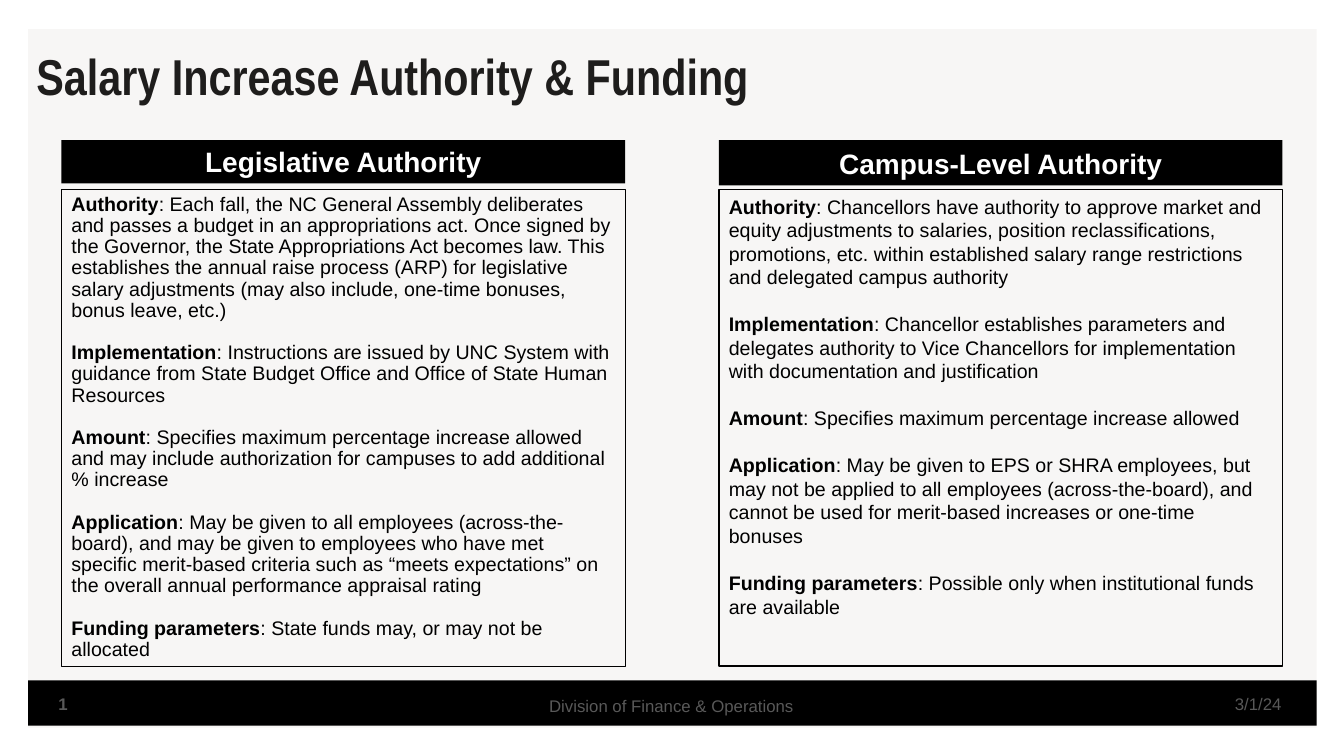
from pptx import Presentation
from pptx.dml.color import RGBColor
from pptx.enum.shapes import MSO_SHAPE
from pptx.enum.text import MSO_ANCHOR, MSO_AUTO_SIZE, PP_ALIGN
from pptx.oxml.ns import qn
from pptx.util import Pt
from lxml import etree

RECTANGLE = MSO_SHAPE.RECTANGLE
TOP, MIDDLE, BOTTOM = MSO_ANCHOR.TOP, MSO_ANCHOR.MIDDLE, MSO_ANCHOR.BOTTOM
LEFT, CENTER, RIGHT = PP_ALIGN.LEFT, PP_ALIGN.CENTER, PP_ALIGN.RIGHT
PX = 9144  # 100 px to the inch
COLORS = {"black": "000000", "white": "FFFFFF", "panel": "D0C6C0", "footer": "595959"}


def add_box(left, top, width, height, fill=None, line=None):
    box = page.shapes.add_shape(RECTANGLE, left * PX, top * PX, width * PX, height * PX)
    box.shadow.inherit = False
    if fill:
        box.fill.solid()
        box.fill.fore_color.rgb = RGBColor.from_string(COLORS[fill])
    else:
        box.fill.background()
    if line:
        box.line.color.rgb = RGBColor.from_string(COLORS["black"])
        box.line.width = Pt(line)
    else:
        box.line.fill.background()
    return box


def style(para, size, color, align=LEFT, bold=None, name="Arial"):
    para.alignment = align
    para.font.name = name
    para.font.size = Pt(size)
    para.font.bold = bold
    para.font.color.rgb = RGBColor.from_string(COLORS[color])


deck = Presentation()
deck.slide_width, deck.slide_height = 1333 * PX, 750 * PX
page = deck.slides.add_slide(deck.slide_layouts[5])

# Background panel and footer bar
panel = add_box(28, 29, 1278, 693, "panel")
panel_color = panel.fill._xPr.find(qn("a:solidFill"))[0]
etree.SubElement(panel_color, qn("a:alpha")).set("val", "15000")
add_box(28, 675, 1278, 45, "black")

# Footer texts
footers = [
    ("3/1/24", 1077, 678, 207, RIGHT, False),
    ("Division of Finance & Operations", 300, 680, 732, CENTER, False),
    ("1", 45, 678, 205, LEFT, True),
]
for text, left, top, width, align, bold in footers:
    frame = page.shapes.add_textbox(left * PX, top * PX, width * PX, 40 * PX).text_frame
    frame.word_wrap = True
    frame.vertical_anchor = MIDDLE
    frame.margin_left = frame.margin_right = 13 * PX
    frame.margin_top = frame.margin_bottom = 7 * PX
    frame.text = text
    style(frame.paragraphs[0], 12, "footer", align, bold)

# Title
title = page.shapes.title
title.left, title.top, title.width, title.height = 26 * PX, 40 * PX, 1274 * PX, 69 * PX
title.text_frame.text = "Salary Increase Authority & Funding"
title.text_frame.auto_size = MSO_AUTO_SIZE.NONE
title.text_frame.vertical_anchor = MIDDLE
style(title.text_frame.paragraphs[0], 36, "black", LEFT, True, "Arial Narrow")

# Two columns: heading, left, heading height, outline, line spacing, paragraph gap, entries
columns = [
    ("Legislative Authority", 61, 43, 0.75, 0.9, 15.1, [
        ("Authority", "Each fall, the NC General Assembly deliberates and passes a budget in an "
         "appropriations act. Once signed by the Governor, the State Appropriations Act becomes law. "
         "This establishes the annual raise process (ARP) for legislative salary adjustments "
         "(may also include, one-time bonuses, bonus leave, etc.)"),
        ("Implementation", "Instructions are issued by UNC System with guidance from State Budget "
         "Office and Office of State Human Resources"),
        ("Amount", "Specifies maximum percentage increase allowed and may include authorization "
         "for campuses to add additional % increase"),
        ("Application", "May be given to all employees (across-the-board), and may be given to "
         "employees who have met specific merit-based criteria such as “meets expectations” on "
         "the overall annual performance appraisal rating"),
        ("Funding parameters", "State funds may, or may not be allocated"),
    ]),
    ("Campus-Level Authority", 713, 45, 1, 1.0, 16.8, [
        ("Authority", "Chancellors have authority to approve market and equity adjustments to "
         "salaries, position reclassifications, promotions, etc. within established salary range "
         "restrictions and delegated campus authority"),
        ("Implementation", "Chancellor establishes parameters and delegates authority to Vice "
         "Chancellors for implementation with documentation and justification"),
        ("Amount", "Specifies maximum percentage increase allowed"),
        ("Application", "May be given to EPS or SHRA employees, but may not be applied to all "
         "employees (across-the-board), and cannot be used for merit-based increases or one-time "
         "bonuses"),
        ("Funding parameters", "Possible only when institutional funds are available"),
    ]),
]
for heading, left, height, outline, spacing, gap, entries in columns:
    frame = add_box(left, 139, 559, height, "black").text_frame
    frame.word_wrap = True
    frame.vertical_anchor = BOTTOM
    frame.text = heading
    frame.paragraphs[0].line_spacing = 0.9
    style(frame.paragraphs[0], 20, "white", CENTER, True)

    frame = add_box(left, 188, 559, 473, line=outline).text_frame
    frame.word_wrap = True
    frame.vertical_anchor = TOP
    for index, (label, text) in enumerate(entries):
        para = frame.add_paragraph() if index else frame.paragraphs[0]
        para.line_spacing = spacing
        if index:
            para.space_before = Pt(gap)
        style(para, 14, "black")
        span = para.add_run()
        span.text = label
        span.font.bold = True
        para.add_run().text = f": {text}"

deck.save("out.pptx")
